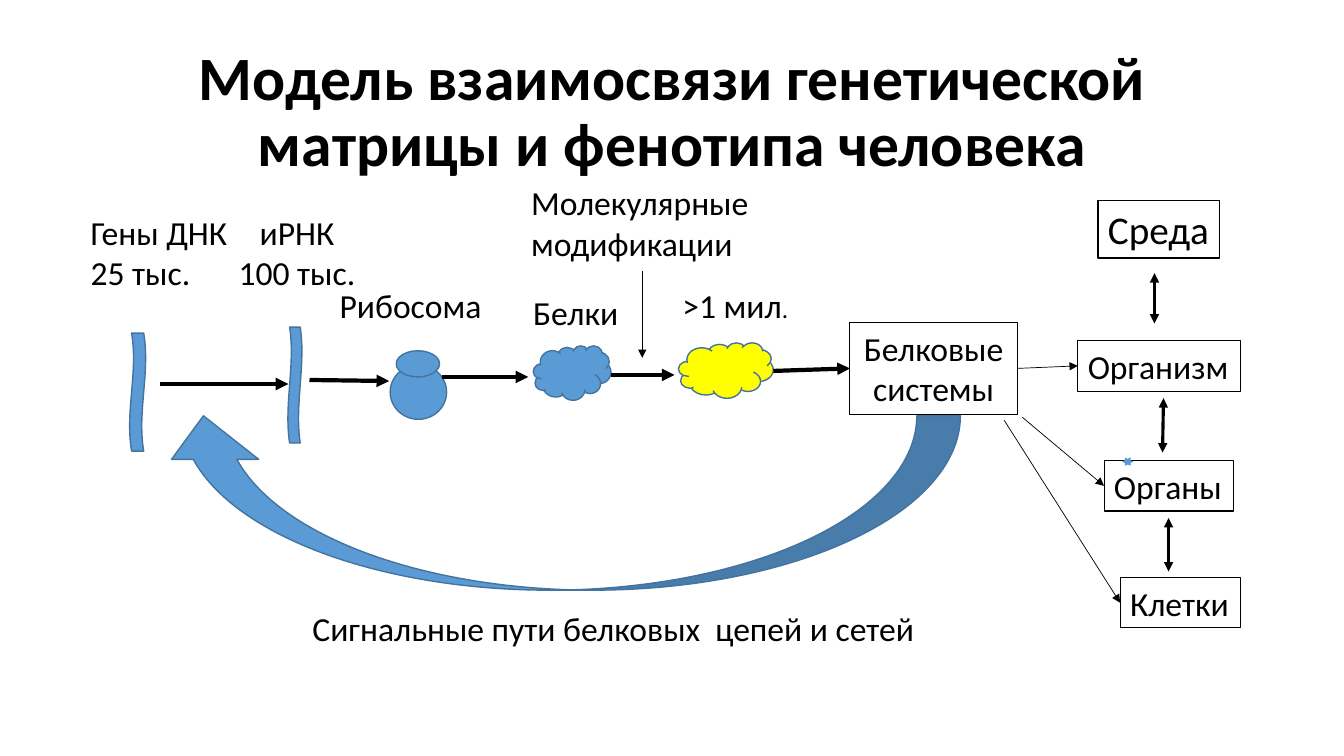
from lxml.etree import SubElement
from pptx import Presentation
from pptx.dml.color import RGBColor
from pptx.enum.shapes import MSO_CONNECTOR, MSO_SHAPE
from pptx.enum.text import MSO_ANCHOR, MSO_AUTO_SIZE, PP_ALIGN
from pptx.oxml.ns import qn
from pptx.util import Inches, Pt

FONT = "Calibri"
BLACK, BLUE, DARK_BLUE, YELLOW = "000000", "5B9BD5", "43739E", "FFFF00"
LEFT, CENTER = PP_ALIGN.LEFT, PP_ALIGN.CENTER

TITLE = "Модель взаимосвязи генетической матрицы и фенотипа человека"

FIGURES = [
    (MSO_SHAPE.WAVE, (0.78, 3.81, 1.17, 0.16), 90, BLUE),
    (MSO_SHAPE.WAVE, (2.35, 3.75, 1.15, 0.14), 90, BLUE),
    (MSO_SHAPE.OVAL, (3.87, 3.62, 0.56, 0.54), 0, BLUE),
    (MSO_SHAPE.OVAL, (3.93, 3.48, 0.43, 0.26), 0, BLUE),
    (MSO_SHAPE.CLOUD, (5.29, 3.43, 0.77, 0.54), 0, BLUE),
    (MSO_SHAPE.CLOUD, (6.73, 3.4, 0.94, 0.55), 0, YELLOW),
    (MSO_SHAPE.CURVED_LEFT_ARROW, (4.69, 1.02, 1.73, 7.94), 90, BLUE),
]

LABELS = [
    ([("Гены ДНК 25 тыс.", 24)], (0.8, 2.05, 1.57, 0.91), LEFT, True),
    ([("иРНК 100 тыс.", 24)], (2.19, 2.05, 1.51, 0.91), CENTER, True),
    ([("Рибосома", 24)], (3.27, 2.78, 1.62, 0.5), LEFT, False),
    ([("Белки", 24)], (5.19, 2.85, 1.06, 0.5), LEFT, False),
    ([(">1 мил", 24), (".", 18)], (6.67, 2.78, 1.26, 0.5), LEFT, False),
    ([("Молекулярные модификации", 24)], (5.17, 1.76, 2.41, 0.91), LEFT, True),
    ([("Сигнальные пути белковых  цепей и сетей", 24)], (3, 5.98, 6.31, 0.5), LEFT, False),
]

BOXES = [
    ("Белковые системы", 24, (8.43, 3.2, 1.66, 0.91), CENTER, True),
    ("Среда", 28, (10.89, 1.99, 1.21, 0.57), LEFT, False),
    ("Организм", 24, (10.69, 3.38, 1.61, 0.5), LEFT, False),
    ("Органы", 24, (10.95, 4.57, 1.28, 0.5), LEFT, False),
    ("Клетки", 24, (11.11, 5.73, 1.19, 0.5), LEFT, False),
]

FLOW_ARROWS = [
    ((1.59, 3.81), (2.86, 3.81), None),
    ((3.07, 3.77), (3.86, 3.78), None),
    ((4.38, 3.74), (5.24, 3.74), None),
    ((6.06, 3.72), (6.69, 3.72), None),
    ((7.67, 3.68), (8.43, 3.66), "Белковые системы"),
]
THIN_ARROWS = [
    ((6.37, 2.69), (6.37, 3.55), None),
    ((10.09, 3.66), (10.69, 3.62), "Организм"),
    ((10.14, 4.14), (10.95, 4.82), "Органы"),
    ((9.96, 4.17), (11.11, 5.98), "Клетки"),
]
TWO_WAY_ARROWS = [
    ((11.45, 2.71), (11.45, 3.21), None),
    ((11.54, 3.95), (11.53, 4.49), None),
    ((11.59, 5.14), (11.59, 5.67), None),
]
SMALL_ARROWS = [((11.13, 4.58), (11.24, 4.58), None)]
ARROW_STYLES = [
    (FLOW_ARROWS, 3, BLACK, False),
    (THIN_ARROWS, 0.5, BLACK, False),
    (TWO_WAY_ARROWS, 2.25, BLACK, True),
    (SMALL_ARROWS, 0.5, BLUE, True),
]


def color(value):
    return RGBColor.from_string(value)


def place(area):
    return [Inches(length) for length in area]


def set_line(line, value, width):
    line.color.rgb = color(value)
    line.width = Pt(width)


def write(shape, runs, alignment, wrap):
    frame = shape.text_frame
    frame.word_wrap = wrap
    frame.auto_size = MSO_AUTO_SIZE.SHAPE_TO_FIT_TEXT
    frame.vertical_anchor = MSO_ANCHOR.TOP
    paragraph = frame.paragraphs[0]
    paragraph.alignment = alignment
    paragraph.font.name = FONT
    paragraph.font.color.rgb = color(BLACK)
    paragraph.font.size = Pt(runs[0][1])
    for text, size in runs:
        run = paragraph.add_run()
        run.text = text
        if size != runs[0][1]:
            run.font.size = Pt(size)


def add_title(slide):
    title = slide.shapes.title
    title.left, title.top, title.width, title.height = place((0.92, 0.4, 11.5, 1.45))
    frame = title.text_frame
    frame.text = TITLE
    frame.word_wrap = True
    frame.auto_size = MSO_AUTO_SIZE.NONE
    frame.vertical_anchor = MSO_ANCHOR.MIDDLE
    paragraph = frame.paragraphs[0]
    paragraph.alignment = CENTER
    paragraph.line_spacing = 0.9
    font = paragraph.font
    font.name, font.size, font.bold = FONT, Pt(44), True
    font.color.rgb = color(BLACK)


def add_figure(slide, kind, area, rotation, fill):
    shape = slide.shapes.add_shape(kind, *place(area))
    shape.rotation = rotation
    shape.shadow.inherit = False
    shape.fill.solid()
    shape.fill.fore_color.rgb = color(fill)
    set_line(shape.line, DARK_BLUE, 1)


def add_box(slide, text, size, area, alignment, wrap):
    shape = slide.shapes.add_shape(MSO_SHAPE.RECTANGLE, *place(area))
    shape.shadow.inherit = False
    shape.fill.background()
    set_line(shape.line, BLACK, 0.75)
    write(shape, [(text, size)], alignment, wrap)
    return shape


def add_arrow(slide, start, end, target, width, value, two_way):
    connector = slide.shapes.add_connector(MSO_CONNECTOR.STRAIGHT, *place(start + end))
    set_line(connector.line, value, width)
    line = connector.line._get_or_add_ln()
    for tag in ["a:headEnd", "a:tailEnd"] if two_way else ["a:tailEnd"]:
        SubElement(line, qn(tag), type="triangle")
    SubElement(connector._element.spPr, qn("a:effectLst"))
    if target is not None:
        connector.end_connect(target, 1)
    return connector


def main():
    presentation = Presentation()
    presentation.slide_width = Inches(13.33)
    presentation.slide_height = Inches(7.5)
    slide = presentation.slides.add_slide(presentation.slide_layouts[5])
    add_title(slide)
    for figure in FIGURES:
        add_figure(slide, *figure)
    for runs, area, alignment, wrap in LABELS:
        write(slide.shapes.add_textbox(*place(area)), runs, alignment, wrap)
    boxes = {box[0]: add_box(slide, *box) for box in BOXES}
    for arrows, width, value, two_way in ARROW_STYLES:
        for start, end, target in arrows:
            connector = add_arrow(slide, start, end, boxes.get(target), width, value, two_way)
            if target == "Организм":
                connector.begin_connect(boxes["Белковые системы"], 3)
    presentation.save("out.pptx")


if __name__ == "__main__":
    main()
